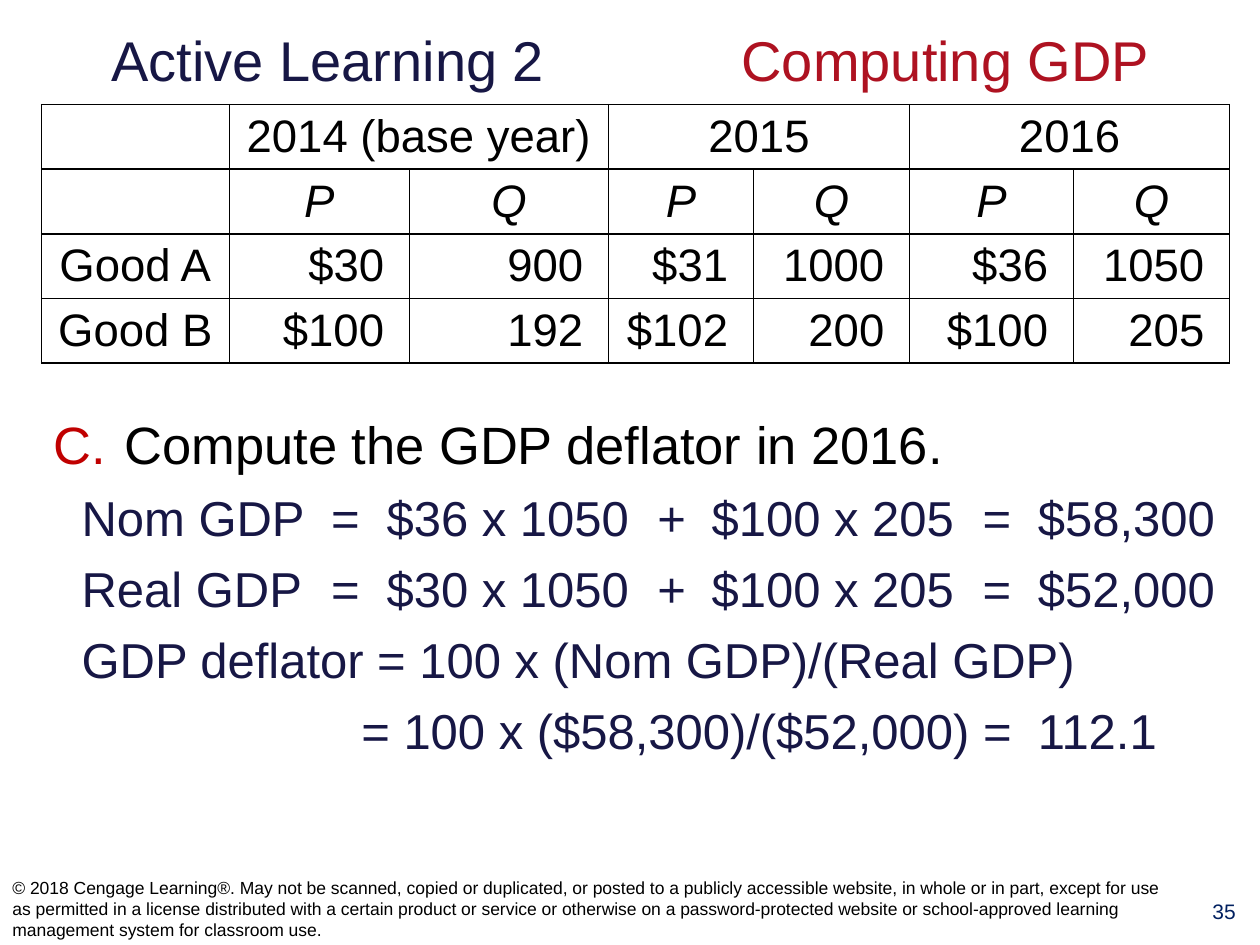
from lxml import etree
from pptx import Presentation
from pptx import util as u
from pptx.dml import color
from pptx.enum import text
from pptx.oxml import ns

NAVY = color.RGBColor(0x17, 0x17, 0x45)
CRIMSON = color.RGBColor(0xAE, 0x12, 0x21)
RED = color.RGBColor(0xC0, 0x00, 0x00)
BLUE = color.RGBColor(0x00, 0x20, 0x60)
BLACK = color.RGBColor(0x00, 0x00, 0x00)
WHITE = color.RGBColor(0xFF, 0xFF, 0xFF)

LEFT, CENTER, RIGHT = text.PP_ALIGN.LEFT, text.PP_ALIGN.CENTER, text.PP_ALIGN.RIGHT
TOP, MIDDLE = text.MSO_ANCHOR.TOP, text.MSO_ANCHOR.MIDDLE

TITLE_TABS = [5]
SUM_TABS = [0.22, 2.2, 2.64, 4.79, 5.22, 7.37, 7.81]
DEFLATOR_TABS = [0.22]
RESULT_TABS = [2.44, 7.81]

EQUATIONS = [
    ("\tNom GDP\t=\t$36 x 1050\t+\t$100 x 205\t=\t$58,300", SUM_TABS),
    ("\tReal GDP\t=\t$30 x 1050\t+\t$100 x 205\t=\t$52,000", SUM_TABS),
    ("\tGDP deflator = 100 x (Nom GDP)/(Real GDP)", DEFLATOR_TABS),
    ("\t= 100 x ($58,300)/($52,000) =\t112.1", RESULT_TABS),
]

COLUMNS = [1.49, 1.43, 1.58, 1.15, 1.24, 1.3, 1.24]
ROW_HEIGHT = 0.5
ROWS = [
    ["", "2014 (base year)", "", "2015", "", "2016", ""],
    ["", "P", "Q", "P", "Q", "P", "Q"],
    ["Good A", "$30", "900", "$31", "1000", "$36", "1050"],
    ["Good B", "$100", "192", "$102", "200", "$100", "205"],
]

COPYRIGHT = (
    "© 2018 Cengage Learning®. May not be scanned, copied or duplicated, or posted "
    "to a publicly accessible website, in whole or in part, except for use as permitted "
    "in a license distributed with a certain product or service or otherwise on a "
    "password-protected website or school-approved learning management system for "
    "classroom use."
)


def apply(obj, values):
    for name, value in values.items():
        setattr(obj, name, value)


def sub(parent, tag, **attrs):
    return etree.SubElement(parent, ns.qn(tag), **{k: str(v) for k, v in attrs.items()})


class Deck:
    font = "Arial"

    def __init__(self, width, height):
        self.prs = Presentation()
        apply(self.prs, {"slide_width": u.Inches(width), "slide_height": u.Inches(height)})
        self.s = self.prs.slides.add_slide(self.prs.slide_layouts[5])

    def run(self, p, content, size, rgb, italic=False):
        r = p.add_run()
        r.text = content
        apply(r.font, {"name": self.font, "size": u.Pt(size), "italic": italic})
        r.font.color.rgb = rgb

    def tabs(self, p, stops):
        tab_list = sub(p._p.get_or_add_pPr(), "a:tabLst")
        for stop in stops:
            sub(tab_list, "a:tab", pos=u.Inches(stop), algn="l")

    def number(self, p, start, indent, rgb):
        ppr = p._p.get_or_add_pPr()
        ppr.set("marL", str(u.Inches(indent)))
        ppr.set("indent", str(-u.Inches(indent)))
        sub(sub(ppr, "a:buClr"), "a:srgbClr", val=rgb)
        sub(ppr, "a:buFont", typeface=self.font)
        sub(ppr, "a:buAutoNum", type="alphaUcPeriod", startAt=start)

    def title(self, box, parts, size, stops):
        sp = self.s.shapes.title
        apply(sp, dict(zip(("left", "top", "width", "height"), map(u.Inches, box))))
        tf = sp.text_frame
        apply(tf, {"word_wrap": False, "auto_size": text.MSO_AUTO_SIZE.NONE,
                   "vertical_anchor": MIDDLE})
        p = tf.paragraphs[0]
        p.alignment = CENTER
        self.tabs(p, stops)
        for content, rgb in parts:
            self.run(p, content, size, rgb)

    def textbox(self, box, content, size, rgb, align=LEFT, anchor=TOP):
        tf = self.s.shapes.add_textbox(*map(u.Inches, box)).text_frame
        apply(tf, {"word_wrap": True, "vertical_anchor": anchor})
        p = tf.paragraphs[0]
        p.alignment = align
        self.run(p, content, size, rgb)
        return tf

    def equation(self, tf, content, stops, size, rgb):
        p = tf.add_paragraph()
        self.tabs(p, stops)
        p.space_before = u.Pt(7)
        self.run(p, content, size, rgb)

    def cell(self, cell, content, size, align, right, italic):
        apply(cell, {"vertical_anchor": MIDDLE,
                     "margin_left": u.Inches(0.05), "margin_right": u.Inches(right),
                     "margin_top": u.Inches(0.04), "margin_bottom": u.Inches(0.04)})
        tcpr = cell._tc.get_or_add_tcPr()
        for side in ("a:lnL", "a:lnR", "a:lnT", "a:lnB"):
            line = sub(tcpr, side, w=u.Pt(1))
            sub(sub(line, "a:solidFill"), "a:srgbClr", val=BLACK)
        cell.fill.solid()
        cell.fill.fore_color.rgb = WHITE
        if content:
            p = cell.text_frame.paragraphs[0]
            p.alignment = align
            self.run(p, content, size, BLACK, italic)

    def table(self, left, top, columns, row_height, rows, size):
        box = (left, top, sum(columns), row_height * len(rows))
        table = self.s.shapes.add_table(
            len(rows), len(columns), *map(u.Inches, box)).table
        apply(table, {"first_row": False, "horz_banding": False})
        for column, width in zip(table.columns, columns):
            column.width = u.Inches(width)
        for i, row in enumerate(rows):
            for j, content in enumerate(row):
                value = i > 1 and j > 0
                self.cell(table.cell(i, j), content, size, RIGHT if value else CENTER,
                          0.2 if value else 0.05, i == 1)
        for j in range(1, len(columns), 2):
            table.cell(0, j).merge(table.cell(0, j + 1))


def main():
    deck = Deck(10, 7.5)
    deck.title((0.17, 0.11, 9.67, 0.72),
               [("Active Learning 2\t", NAVY), ("Computing GDP", CRIMSON)], 32, TITLE_TABS)
    tf = deck.textbox((0.33, 3.22, 9.5, 3.84), "Compute the GDP deflator in 2016.", 30, BLACK)
    deck.number(tf.paragraphs[0], 3, 0.56, RED)
    for content, stops in EQUATIONS:
        deck.equation(tf, content, stops, 28, NAVY)
    deck.textbox((9.43, 7.08, 0.57, 0.41), "35", 12, BLUE, CENTER)
    deck.textbox((0, 6.92, 9.41, 0.58), COPYRIGHT, 10, BLACK, anchor=MIDDLE)
    deck.table(0.33, 0.83, COLUMNS, ROW_HEIGHT, ROWS, 26)
    deck.prs.save("out.pptx")


if __name__ == "__main__":
    main()
